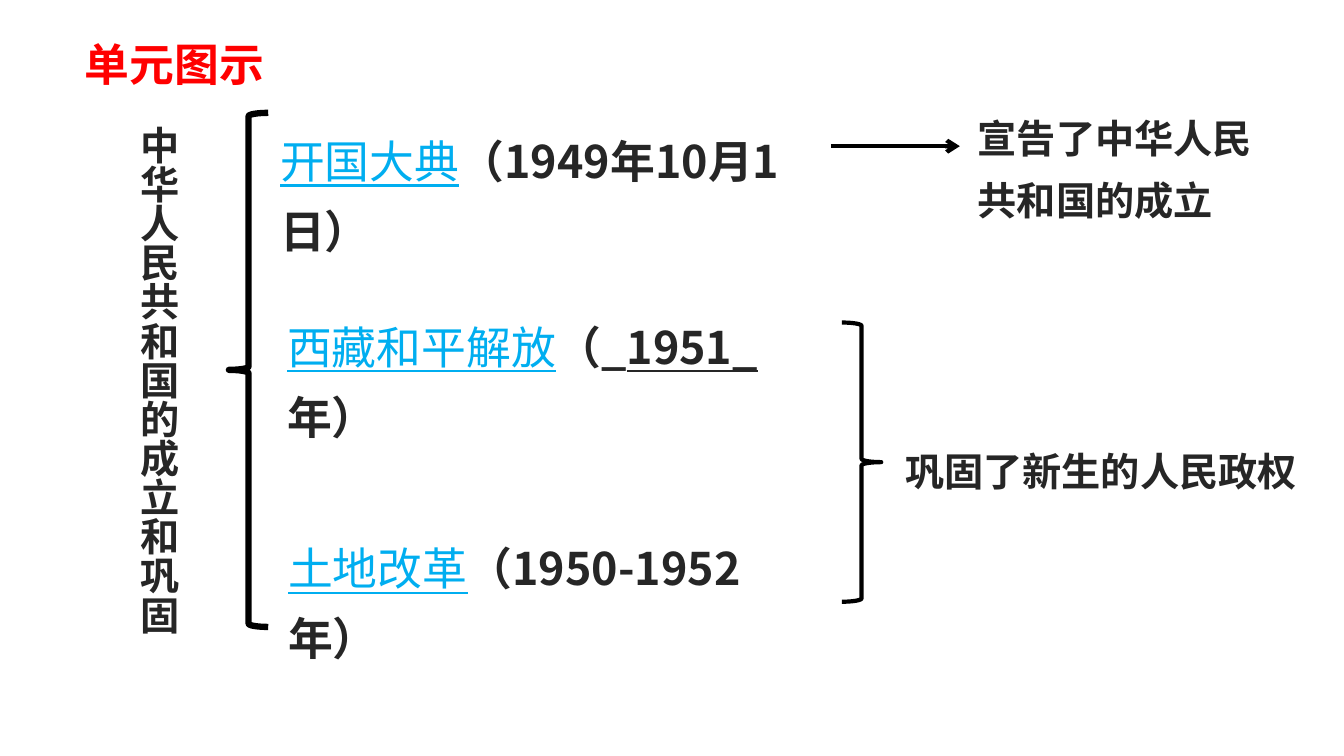
from lxml.etree import SubElement
from pptx import Presentation
from pptx.dml.color import RGBColor
from pptx.enum.shapes import MSO_CONNECTOR, MSO_SHAPE
from pptx.enum.text import MSO_ANCHOR, MSO_AUTO_SIZE, PP_ALIGN
from pptx.oxml.ns import qn
from pptx.util import Inches, Pt

COLORS = {"title": "FF0000", "event": "00AEF0", "text": "262626", "line": "000000"}
CJK_FONT = "Noto Sans CJK SC"


def color(name):
    return RGBColor.from_string(COLORS[name])


def format_paragraph(para, size, font_name, color_name="text", bold=True, spacing=1.3):
    para.alignment = PP_ALIGN.LEFT
    para.line_spacing = spacing
    font = para.font
    font.size = Pt(size)
    font.bold = bold
    font.color.rgb = color(color_name)
    font.name = font_name
    defaults = para._p.pPr.find(qn("a:defRPr"))
    SubElement(defaults, qn("a:ea")).set("typeface", CJK_FONT)


def add_text_box(page, left, top, width, height):
    box = page.shapes.add_textbox(Inches(left), Inches(top), Inches(width), Inches(height))
    box.text_frame.word_wrap = True
    box.text_frame.auto_size = MSO_AUTO_SIZE.SHAPE_TO_FIT_TEXT
    return box.text_frame


def add_label(page, text, left, top, width, height, font_name=CJK_FONT, vertical=False):
    frame = add_text_box(page, left, top, width, height)
    if vertical:
        frame.word_wrap = False  # keeps the label in a single column
        frame._txBody.bodyPr.set("vert", "eaVert")
    para = frame.paragraphs[0]
    para.add_run().text = text
    format_paragraph(para, 28, font_name)


def add_event(page, event, date_parts, left, top, width):
    """Underlined event name, then date parts given as (text, underlined)."""
    para = add_text_box(page, left, top, width, 0.7).paragraphs[0]
    format_paragraph(para, 32, CJK_FONT)
    name = para.add_run()
    name.text = event
    name.font.bold = False
    name.font.underline = True
    name.font.color.rgb = color("event")
    for text, underlined in date_parts:
        span = para.add_run()
        span.text = text
        span.font.underline = underlined


def add_brace(page, kind, left, top, height, weight):
    brace = page.shapes.add_shape(kind, Inches(left), Inches(top), Inches(0.39), Inches(height))
    brace.shadow.inherit = False
    brace.fill.background()
    brace.line.color.rgb = color("line")
    brace.line.width = Pt(weight)


def add_arrow(page, left, right, y):
    arrow = page.shapes.add_connector(
        MSO_CONNECTOR.STRAIGHT, Inches(left), Inches(y), Inches(right), Inches(y))
    arrow.line.color.rgb = color("line")
    arrow.line.width = Pt(3)
    SubElement(arrow.line._get_or_add_ln(), qn("a:tailEnd")).set("type", "arrow")
    SubElement(arrow._element.spPr, qn("a:effectLst"))


def set_title(page, text):
    title = page.shapes.title
    title.left, title.top = Inches(0.74), Inches(0.23)
    title.width, title.height = Inches(11.98), Inches(0.87)
    frame = title.text_frame
    frame.auto_size = MSO_AUTO_SIZE.NONE
    frame.vertical_anchor = MSO_ANCHOR.MIDDLE
    frame.text = text
    format_paragraph(frame.paragraphs[0], 32, "Arial", "title", spacing=0.9)


def main():
    deck = Presentation()
    deck.slide_width, deck.slide_height = Inches(13.33), Inches(7.5)
    page = deck.slides.add_slide(deck.slide_layouts[5])
    set_title(page, "单元图示")

    # Unit theme and its three events
    add_label(page, "中华人民共和国的成立和巩固", 1.19, 1.15, 0.81, 5.21, "Arial", vertical=True)
    add_brace(page, MSO_SHAPE.LEFT_BRACE, 2.27, 1.12, 5.1, 4.5)
    add_event(page, "开国大典", [("（1949年10月1日）", False)], 2.68, 1.12, 5.83)
    add_event(page, "西藏和平解放", [("（_", False), ("1951_", True), ("年）", False)],
              2.75, 2.96, 5.6)
    add_event(page, "土地改革", [("（1950-1952年）", False)], 2.76, 5.16, 5.36)

    # Significance of the events
    add_arrow(page, 8.24, 9.52, 1.45)
    add_label(page, "宣告了中华人民共和国的成立", 9.6, 0.95, 3.21, 1.24)
    add_brace(page, MSO_SHAPE.RIGHT_BRACE, 8.35, 3.2, 2.77, 3)
    add_label(page, "巩固了新生的人民政权", 8.88, 4.25, 4.25, 0.63)

    deck.save("out.pptx")


if __name__ == "__main__":
    main()
